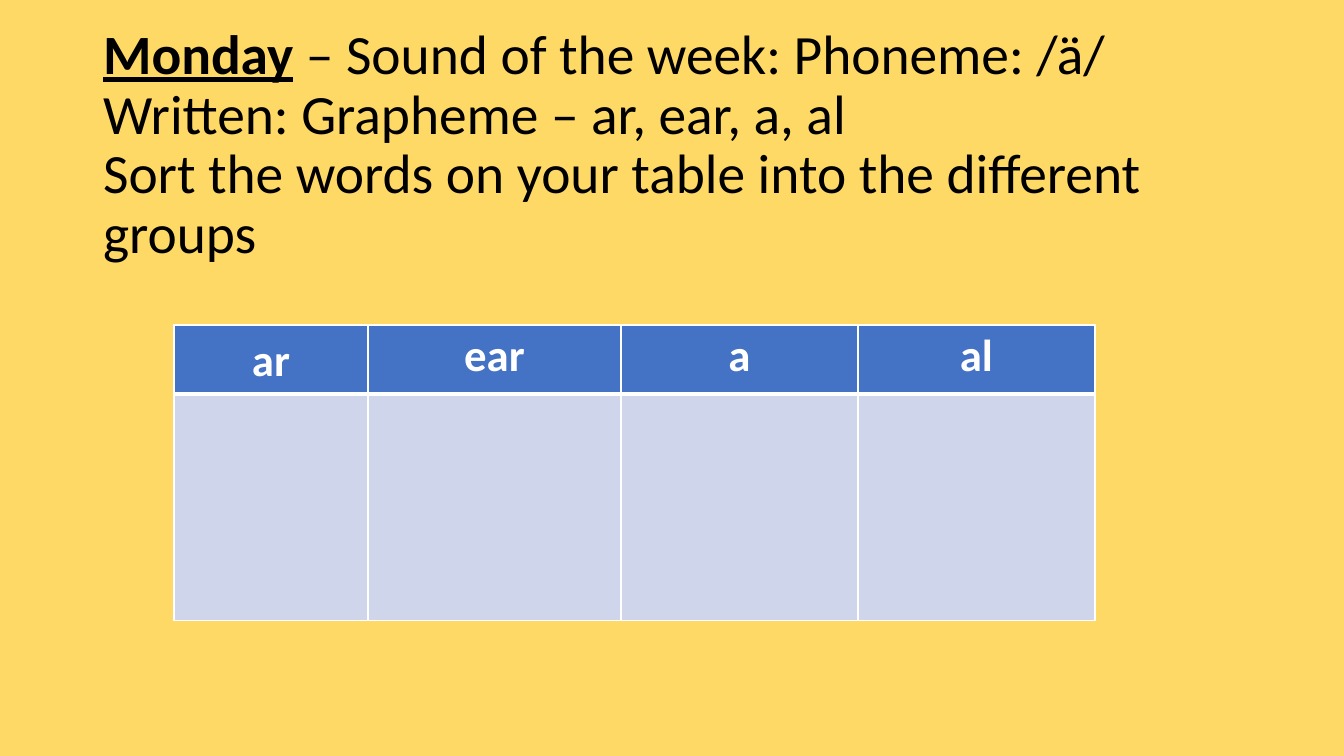
import pptx
import pptx.dml.color
import pptx.enum.text
import pptx.oxml.ns
import pptx.util
from lxml import etree

SLIDE_SIZE = (1344, 756)
PX = 914400 / 100.8
FONT = "Calibri"
BACKGROUND, BLACK, WHITE = "FFD966", "000000", "FFFFFF"
HEADER_FILL, BODY_FILL = "4472C4", "CFD5EA"

DAY = "Monday"
TITLE_LINES = [
    " – Sound of the week: Phoneme: /ä/ Written: Grapheme – ar, ear, a, al",
    "Sort the words on your table into the different groups",
]
TITLE_BOX = (93, 73, 1159, 146)

GRAPHEMES = ["ar", "ear", "a", "al"]
TABLE_ORIGIN = (174, 325)
COLUMN_WIDTHS = [194, 253, 237, 237]
ROW_HEIGHTS = [67, 227]
THIN, THICK = 1, 3


def px(length):
    return pptx.util.Emu(round(length * PX))


def rgb(color):
    return pptx.dml.color.RGBColor.from_string(color)


def add_text(paragraph, text, size, color, bold=False, underline=False):
    run = paragraph.add_run()
    run.text = text
    run.font.name = FONT
    run.font.size = pptx.util.Pt(size)
    run.font.color.rgb = rgb(color)
    run.font.bold = bold
    run.font.underline = underline


def set_borders(cell, top, bottom):
    """Draw white borders; top and bottom are widths in points."""
    properties = cell._tc.get_or_add_tcPr()
    for side, width in (("L", THIN), ("R", THIN), ("T", top), ("B", bottom)):
        line = etree.SubElement(properties, pptx.oxml.ns.qn(f"a:ln{side}"),
                                w=str(pptx.util.Pt(width)))
        fill = etree.SubElement(line, pptx.oxml.ns.qn("a:solidFill"))
        etree.SubElement(fill, pptx.oxml.ns.qn("a:srgbClr"), val=WHITE)


def fill_title(title):
    title.left, title.top, title.width, title.height = map(px, TITLE_BOX)
    frame = title.text_frame
    frame.word_wrap = True
    frame.auto_size = pptx.enum.text.MSO_AUTO_SIZE.NONE
    frame.vertical_anchor = pptx.enum.text.MSO_ANCHOR.MIDDLE
    paragraph = frame.paragraphs[0]
    paragraph.alignment = pptx.enum.text.PP_ALIGN.LEFT
    paragraph.line_spacing = 0.9
    paragraph.space_before = pptx.util.Pt(0)
    add_text(paragraph, DAY, 39.6, BLACK, bold=True, underline=True)
    for index, line in enumerate(TITLE_LINES):
        if index:
            paragraph.add_line_break()
        add_text(paragraph, line, 39.6, BLACK)


def add_sorting_table(slide):
    bounds = (*TABLE_ORIGIN, sum(COLUMN_WIDTHS), sum(ROW_HEIGHTS))
    table = slide.shapes.add_table(
        len(ROW_HEIGHTS), len(COLUMN_WIDTHS), *map(px, bounds)).table
    for row, height in zip(table.rows, ROW_HEIGHTS):
        row.height = px(height)
    for index, (grapheme, width) in enumerate(zip(GRAPHEMES, COLUMN_WIDTHS)):
        table.columns[index].width = px(width)
        header, body = table.cell(0, index), table.cell(1, index)
        set_borders(header, THIN, THICK)
        set_borders(body, THICK, THIN)
        for cell, color in ((header, HEADER_FILL), (body, BODY_FILL)):
            cell.fill.solid()
            cell.fill.fore_color.rgb = rgb(color)
        if index:
            header.margin_left = header.margin_right = 0
            header.margin_top = header.margin_bottom = 0
        paragraph = header.text_frame.paragraphs[0]
        paragraph.alignment = pptx.enum.text.PP_ALIGN.CENTER
        paragraph.line_spacing = 1.07
        paragraph.space_after = pptx.util.Pt(8)
        add_text(paragraph, grapheme, 32, WHITE, bold=True)


def main():
    presentation = pptx.Presentation()
    presentation.slide_width, presentation.slide_height = map(px, SLIDE_SIZE)
    slide = presentation.slides.add_slide(
        presentation.slide_layouts.get_by_name("Title Only"))
    slide.background.fill.solid()
    slide.background.fill.fore_color.rgb = rgb(BACKGROUND)
    fill_title(slide.shapes.title)
    add_sorting_table(slide)
    presentation.save("out.pptx")


if __name__ == "__main__":
    main()
